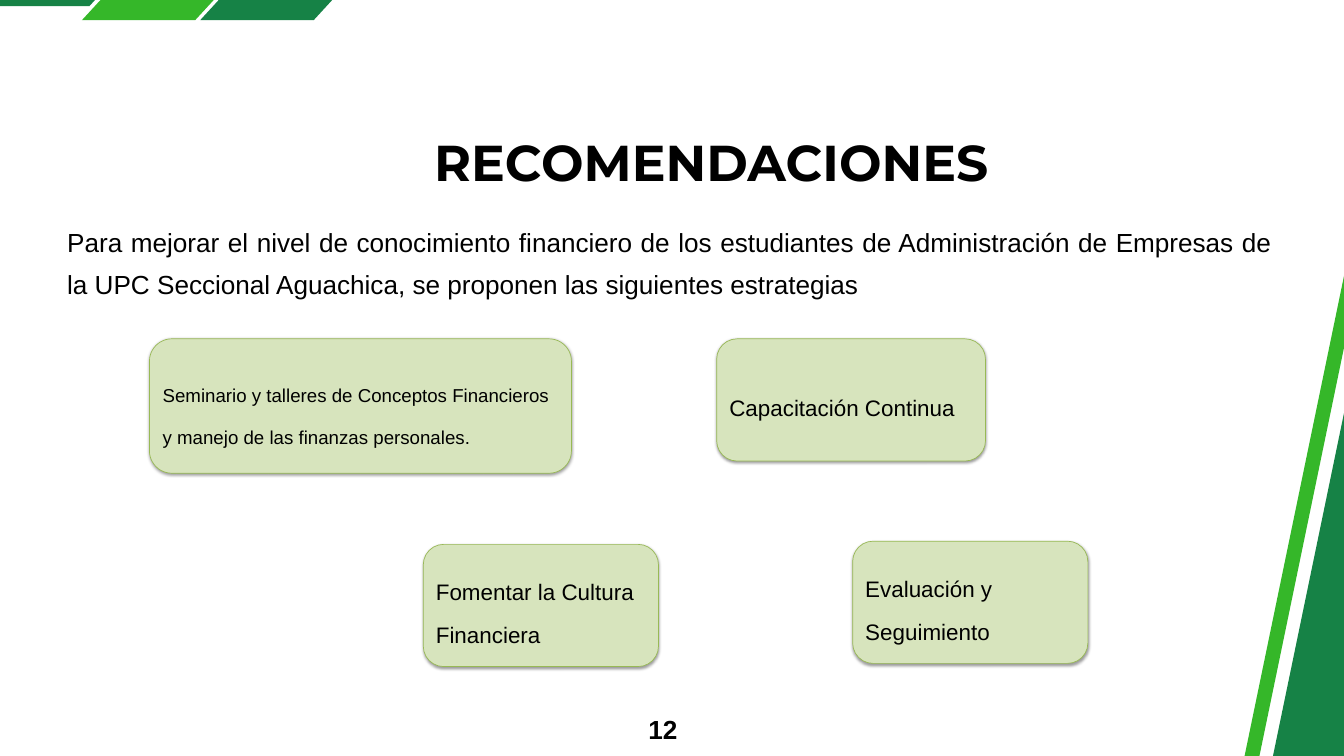
from lxml import etree
from pptx import Presentation
from pptx.dml.color import RGBColor
from pptx.enum.shapes import MSO_SHAPE
from pptx.enum.text import MSO_ANCHOR, PP_ALIGN
from pptx.oxml.ns import qn
from pptx.util import Cm, Pt

DARK = RGBColor(0x16, 0x82, 0x46)
LIGHT = RGBColor(0x35, 0xB7, 0x29)
PALE = RGBColor(0xD7, 0xE4, 0xBD)
EDGE = RGBColor(0x98, 0xB9, 0x55)
BLACK = RGBColor(0, 0, 0)
ROUND = MSO_SHAPE.ROUNDED_RECTANGLE
TOP, MIDDLE = MSO_ANCHOR.TOP, MSO_ANCHOR.MIDDLE
LEFT, CENTER = PP_ALIGN.LEFT, PP_ALIGN.CENTER
RIGHT, JUSTIFY = PP_ALIGN.RIGHT, PP_ALIGN.JUSTIFY


def write(shape, text, size, align, space, bold=False, face="Arial"):
    frame = shape.text_frame
    frame.word_wrap = True
    frame.text = text
    para = frame.paragraphs[0]
    para.alignment = align
    para.line_spacing = space
    look = {"name": face, "size": Pt(size), "bold": bold}
    for key, value in look.items():
        setattr(para.font, key, value)
    para.font.color.rgb = BLACK
    return frame


def trim(frame):
    for side in ("left", "top", "right", "bottom"):
        setattr(frame, f"margin_{side}", 0)
    frame.vertical_anchor = TOP


deck = Presentation()
deck.slide_width, deck.slide_height = Cm(50.8), Cm(28.58)
slide = deck.slides.add_slide(deck.slide_layouts[5])
shapes = slide.shapes

# Green bands bleeding over the top and right edges:
# left, top, width, height, slant, turn
bands = [
    (DARK, -6.68, -2.11, 12.19, 2.34, 2.13, 0),
    (LIGHT, 3.1, -2.62, 7.39, 3.38, 3.11, 0),
    (DARK, 7.57, -2.62, 7.39, 3.38, 3.1, 0),
    (DARK, 35.2, 13.59, 41.68, 11.84, 0, 281.7),
    (LIGHT, 28.6, 18.08, 41.68, 0.55, 0, 281.7),
]
for color, left, top, width, height, slant, turn in bands:
    right, base = left + width, top + height
    points = [(left + slant, top), (right, top),
              (right - slant, base), (left, base)]
    start, *rest = [(Cm(x), Cm(y)) for x, y in points]
    pen = shapes.build_freeform(*start)
    pen.add_line_segments(rest)
    band = pen.convert_to_shape()
    band.rotation = turn
    band.shadow.inherit = False
    band.fill.solid()
    band.fill.fore_color.rgb = color
    band.line.fill.background()

# Title
title = shapes.title
place = {"left": 5.72, "top": 4.95, "width": 42.32, "height": 2.31}
for key, value in place.items():
    setattr(title, key, Cm(value))
trim(write(title, "RECOMENDACIONES", 54, CENTER, 1.0, True, "Montserrat"))

# Introduction and page number
intro = ("Para mejorar el nivel de conocimiento financiero de los estudiantes "
         "de Administración de Empresas de la UPC Seccional Aguachica, "
         "se proponen las siguientes estrategias")
notes = [
    ((2.54, 8.15, 45.49, 3.02), intro, JUSTIFY, 45.3, False),
    ((24.18, 26.77, 1.42, 1.27), "12", RIGHT, 39.2, True),
]
for spot, text, align, space, bold in notes:
    box = shapes.add_textbox(*map(Cm, spot))
    trim(write(box, text, 28, align, Pt(space), bold))

# Strategy cards
cards = [
    ((5.65, 12.81, 15.95, 5.08), 20,
     "Seminario y talleres de Conceptos Financieros y manejo de las finanzas personales."),
    ((27.09, 12.81, 10.16, 4.62), 24, "Capacitación Continua"),
    ((16, 20.58, 8.89, 4.62), 24, "Fomentar la Cultura Financiera"),
    ((32.23, 20.46, 8.89, 4.62), 24, "Evaluación y Seguimiento"),
]
for spot, size, text in cards:
    card = shapes.add_shape(ROUND, *map(Cm, spot))
    card.fill.solid()
    card.fill.fore_color.rgb = PALE
    card.line.color.rgb = EDGE
    card.line.width = Pt(0.75)
    frame = write(card, text, size, LEFT, Pt(45.3))
    frame.vertical_anchor = MIDDLE

    # Soft shadow straight below the card
    card.shadow.inherit = False
    effects = card.element.spPr.find(qn("a:effectLst"))
    shade = etree.SubElement(effects, qn("a:outerShdw"), blurRad="40000",
                             dist="20000", dir="5400000", rotWithShape="0")
    tint = etree.SubElement(shade, qn("a:srgbClr"), val="000000")
    etree.SubElement(tint, qn("a:alpha"), val="38000")

deck.save("out.pptx")
